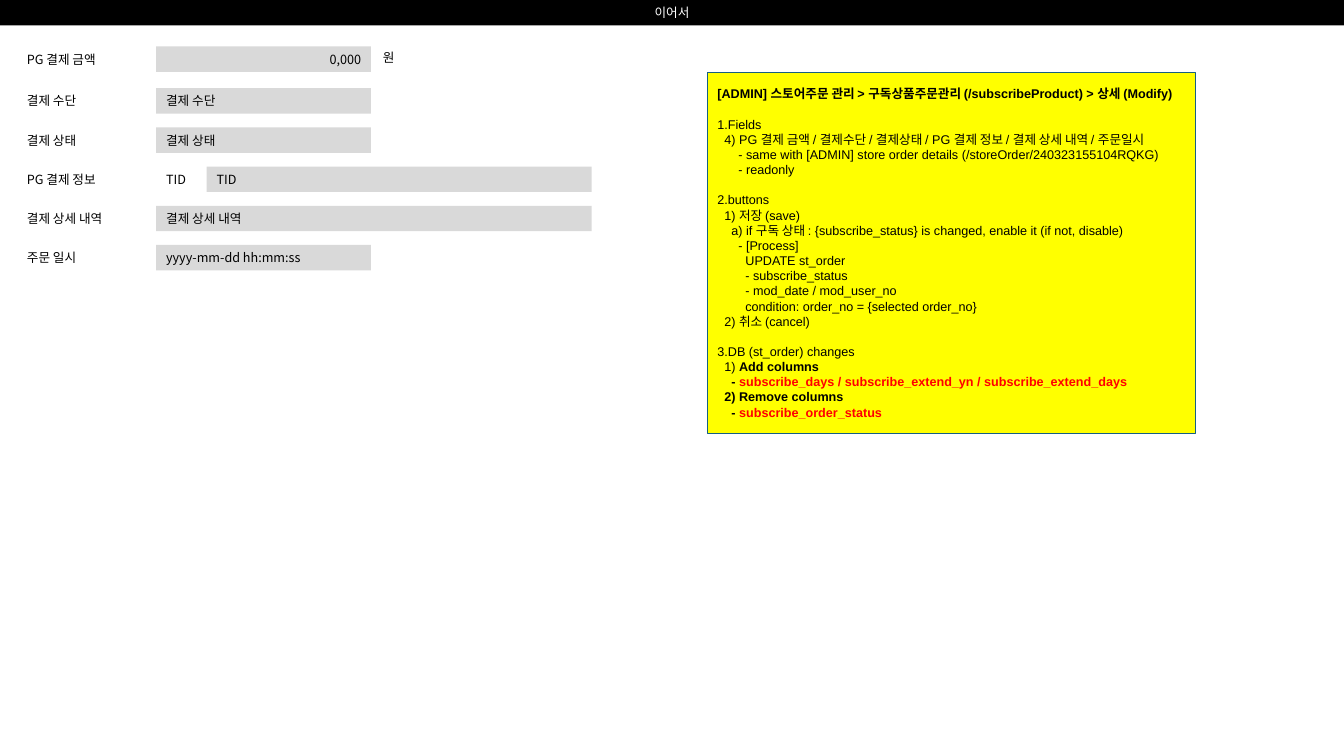
from lxml.etree import SubElement
from pptx import Presentation
from pptx.dml.color import RGBColor
from pptx.enum.shapes import MSO_SHAPE as Shape
from pptx.enum.text import MSO_ANCHOR as Anchor, PP_ALIGN as Align
from pptx.oxml.ns import qn
from pptx.util import Pt

BLACK = RGBColor(0x00, 0x00, 0x00)
WHITE = RGBColor(0xFF, 0xFF, 0xFF)
GREY = RGBColor(0xD9, 0xD9, 0xD9)
YELLOW = RGBColor(0xFF, 0xFF, 0x00)
TEAL = RGBColor(0x15, 0x60, 0x82)
RED = RGBColor(0xFF, 0x00, 0x00)

FORM_FONT = "Noto Sans CJK KR"
NOTE_FONT = "Arial"
LABEL_LEFT, FIELD_LEFT = 12.2, 111.6
FIELD_WIDTH, WIDE_WIDTH = 153.4, 311
TID_LEFT = 147.6
ROW_HEIGHT = 18.2
AMOUNT_TOP, FIRST_TOP, ROW_PITCH = 33.1, 63, 28
INDENT, SECTION_GAP = 5, 10.8

ROWS = [
    ("결제 수단", "결제 수단", FIELD_LEFT, FIELD_WIDTH),
    ("결제 상태", "결제 상태", FIELD_LEFT, FIELD_WIDTH),
    ("PG 결제 정보", "TID", TID_LEFT, FIELD_LEFT + WIDE_WIDTH - TID_LEFT),
    ("결제 상세 내역", "결제 상세 내역", FIELD_LEFT, WIDE_WIDTH),
    ("주문 일시", "yyyy-mm-dd hh:mm:ss", FIELD_LEFT, FIELD_WIDTH),
]

PLAIN, BOLD, ALERT = (False, BLACK), (True, BLACK), (True, RED)
NOTE_SECTIONS = [
    [(0, [("[ADMIN] 스토어주문 관리 > 구독상품주문관리 (/subscribeProduct) > 상세 (Modify)", BOLD)])],
    [
        (0, [("1.Fields", PLAIN)]),
        (1, [("4) PG 결제 금액 / 결제수단 / 결제상태 / PG 결제 정보 / 결제 상세 내역 / 주문일시", PLAIN)]),
        (3, [("- same with [ADMIN] store order details (/storeOrder/240323155104RQKG)", PLAIN)]),
        (3, [("- readonly", PLAIN)]),
    ],
    [
        (0, [("2.buttons", PLAIN)]),
        (1, [("1) 저장 (save)", PLAIN)]),
        (2, [("a) if 구독 상태 : {subscribe_status} is changed, enable it (if not, disable)", PLAIN)]),
        (3, [("- [Process]", PLAIN)]),
        (4, [("UPDATE st_order", PLAIN)]),
        (4, [("- subscribe_status", PLAIN)]),
        (4, [("- mod_date / mod_user_no", PLAIN)]),
        (4, [("condition: order_no = {selected order_no}", PLAIN)]),
        (1, [("2) 취소 (cancel)", PLAIN)]),
    ],
    [
        (0, [("3.DB (st_order) changes", PLAIN)]),
        (1, [("1) ", PLAIN), ("Add columns", BOLD)]),
        (2, [("- ", BOLD), ("subscribe_days / subscribe_extend_yn / subscribe_extend_days", ALERT)]),
        (1, [("2) Remove columns", BOLD)]),
        (2, [("- ", BOLD), ("subscribe_order_status", ALERT)]),
    ],
]


def add_run(paragraph, text, font_name, color, bold=False):
    """Append one 9 pt run to a paragraph."""
    run = paragraph.add_run()
    run.text = text
    run.font.name = font_name
    run.font.size = Pt(9)
    run.font.bold = bold
    run.font.color.rgb = color
    return run


def add_form_text(frame, text, color=BLACK, align=Align.LEFT):
    """Write one line of form text, vertically centred."""
    frame.word_wrap = True
    frame.vertical_anchor = Anchor.MIDDLE
    line = frame.paragraphs[0]
    line.alignment = align
    run = add_run(line, text, FORM_FONT, color)
    SubElement(run.font._element, qn("a:ea")).set("typeface", FORM_FONT)


def add_panel(slide, left, top, width, height, fill):
    """Add a flat rectangle without outline."""
    panel = slide.shapes.add_shape(Shape.RECTANGLE, Pt(left), Pt(top), Pt(width), Pt(height))
    panel.shadow.inherit = False
    panel.fill.solid()
    panel.fill.fore_color.rgb = fill
    panel.line.fill.background()
    return panel


def add_label(slide, text, left, top, width):
    """Add a form label."""
    label = slide.shapes.add_textbox(Pt(left), Pt(top), Pt(width), Pt(ROW_HEIGHT))
    add_form_text(label.text_frame, text)


def add_field(slide, text, left, top, width, align=Align.LEFT):
    """Add a grey read-only field."""
    field = add_panel(slide, left, top, width, ROW_HEIGHT, GREY)
    add_form_text(field.text_frame, text, align=align)


def add_note(slide):
    """Add the yellow specification note."""
    note = add_panel(slide, 505.4, 51.8, 348.5, 257.8, YELLOW)
    note.line.color.rgb = TEAL
    note.line.width = Pt(0.75)
    frame = note.text_frame
    frame.word_wrap = True
    frame.vertical_anchor = Anchor.MIDDLE
    for section_no, section in enumerate(NOTE_SECTIONS):
        for line_no, (level, runs) in enumerate(section):
            first_of_section = line_no == 0
            if section_no == 0 and first_of_section:
                line = frame.paragraphs[0]
            else:
                line = frame.add_paragraph()
                line.space_before = Pt(SECTION_GAP if first_of_section else 0)
            line.alignment = Align.LEFT
            line._p.get_or_add_pPr().set("marL", str(Pt(level * INDENT)))
            for text, (bold, color) in runs:
                add_run(line, text, NOTE_FONT, color, bold)


def main():
    """Build the slide and save it."""
    deck = Presentation()
    deck.slide_width, deck.slide_height = Pt(960), Pt(540)
    slide = deck.slides.add_slide(deck.slide_layouts[6])

    header = add_panel(slide, 0, 0, 960, ROW_HEIGHT, BLACK)
    add_form_text(header.text_frame, "이어서", WHITE, Align.CENTER)

    add_label(slide, "PG 결제 금액", LABEL_LEFT, AMOUNT_TOP, 96.5)
    add_field(slide, "0,000", FIELD_LEFT, AMOUNT_TOP, FIELD_WIDTH, Align.RIGHT)
    add_label(slide, "원", 266.4, 31.7, 29.5)

    for row_no, (label, value, left, width) in enumerate(ROWS):
        top = FIRST_TOP + row_no * ROW_PITCH
        add_label(slide, label, LABEL_LEFT, top, 96.5)
        add_field(slide, value, left, top, width)
        if left == TID_LEFT:
            add_label(slide, "TID", FIELD_LEFT, top, 51.8)

    add_note(slide)
    deck.save("out.pptx")


if __name__ == "__main__":
    main()
